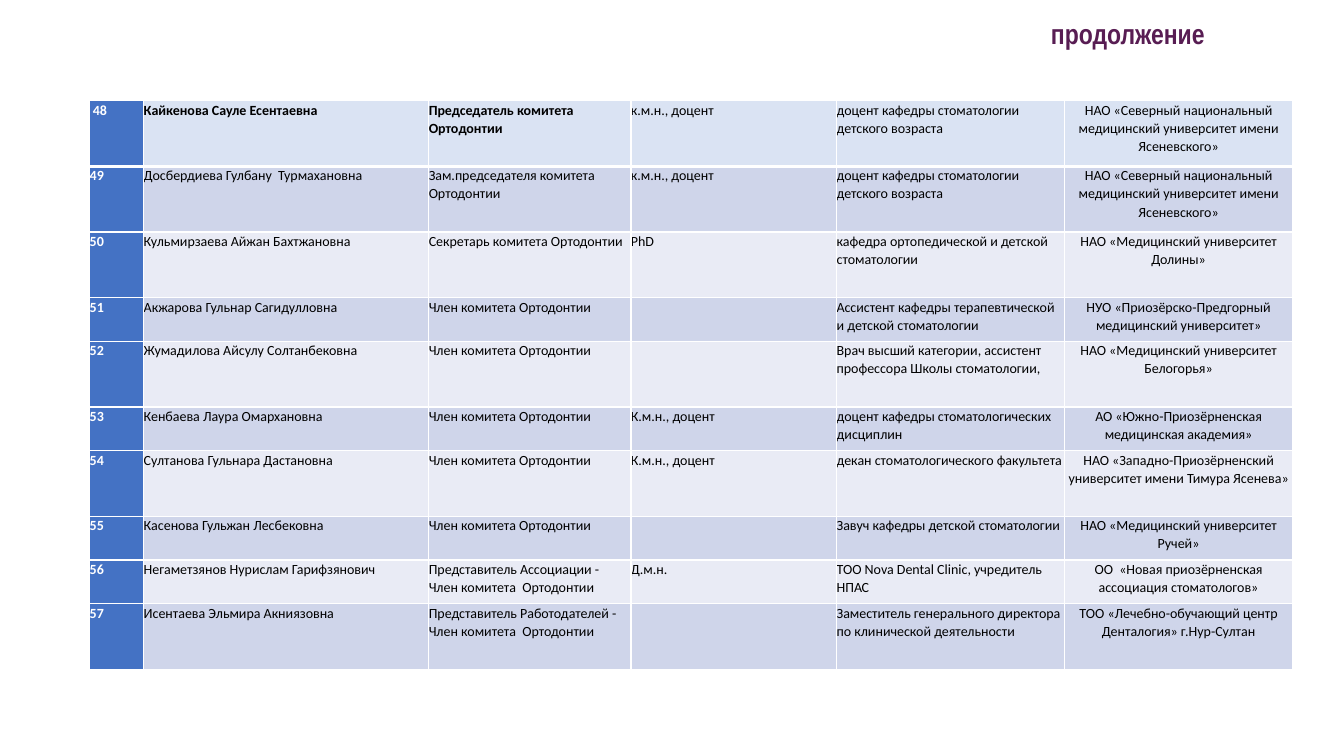
from dataclasses import dataclass

from lxml import etree
from pptx import Presentation
from pptx.dml.color import RGBColor
from pptx.enum import text
from pptx.oxml import ns
from pptx.util import Pt


@dataclass(frozen=True)
class Theme:
    title_font: str = "Arial Narrow"
    table_font: str = "Calibri"
    title_size: float = 20
    table_size: float = 10
    title: str = "581D53"
    ink: str = "000000"
    white: str = "FFFFFF"
    number_fill: str = "4472C4"
    chair_fill: str = "DAE3F3"
    bands: tuple = ("E9EBF5", "CFD5EA")
    line_spacing: float = 1.07


COLUMN_WIDTHS = (38.6, 203.6, 144.4, 147, 163, 162.4)
TALL, SHORT = 46.9, 31.2
ROW_HEIGHTS = (TALL, TALL, TALL, SHORT, TALL, SHORT, TALL, SHORT, SHORT, TALL)
MEMBER = "Член комитета Ортодонтии"
CHILD_DENTISTRY = "доцент кафедры стоматологии детского возраста"
NATIONAL = "НАО «Северный национальный медицинский университет имени Ясеневского»"

# number, name, role, degree, position, organisation
COMMITTEE = (
    (" 48", "Кайкенова Сауле Есентаевна", "Председатель комитета Ортодонтии",
     "к.м.н., доцент", CHILD_DENTISTRY, NATIONAL),
    ("49", "Досбердиева Гулбану  Турмахановна", "Зам.председателя комитета Ортодонтии",
     "к.м.н., доцент", CHILD_DENTISTRY, NATIONAL),
    ("50", "Кульмирзаева Айжан Бахтжановна", "Секретарь комитета Ортодонтии",
     "PhD", "кафедра ортопедической и детской стоматологии",
     "НАО «Медицинский университет Долины»"),
    ("51", "Акжарова Гульнар Сагидулловна", MEMBER,
     "", "Ассистент кафедры терапевтической и детской стоматологии",
     "НУО «Приозёрско-Предгорный медицинский университет»"),
    ("52", "Жумадилова Айсулу Солтанбековна", MEMBER,
     "", "Врач высший категории, ассистент профессора Школы стоматологии,",
     "НАО «Медицинский университет Белогорья»"),
    ("53", "Кенбаева Лаура Омархановна", MEMBER,
     "К.м.н., доцент", "доцент кафедры стоматологических дисциплин",
     "АО «Южно-Приозёрненская медицинская академия»"),
    ("54", "Султанова Гульнара Дастановна", MEMBER,
     "К.м.н., доцент", "декан стоматологического факультета",
     "НАО «Западно-Приозёрненский университет имени Тимура Ясенева»"),
    ("55", "Касенова Гульжан Лесбековна", MEMBER,
     "", "Завуч кафедры детской стоматологии",
     "НАО «Медицинский университет Ручей»"),
    ("56", "Негаметзянов Нурислам Гарифзянович",
     "Представитель Ассоциации - Член комитета  Ортодонтии",
     "Д.м.н.", "ТОО Nova Dental Clinic, учредитель НПАС",
     "ОО  «Новая приозёрненская ассоциация стоматологов»"),
    ("57", "Исентаева Эльмира Акниязовна",
     "Представитель Работодателей - Член комитета  Ортодонтии",
     "", "Заместитель генерального директора по клинической деятельности",
     "ТОО «Лечебно-обучающий центр Денталогия» г.Нур-Султан"),
)


class SlideBuilder:
    def __init__(self, slide, theme):
        self.slide = slide
        self.theme = theme

    def run(self, p, words, font, size, color, bold):
        r = p.add_run()
        r.text = words
        r.font.name = font
        r.font.size = Pt(size)
        r.font.bold = bold
        r.font.color.rgb = RGBColor.from_string(color)

    def title(self, words, left, top, width, height):
        th = self.theme
        sp = self.slide.shapes.title
        sp.left, sp.top, sp.width, sp.height = map(Pt, (left, top, width, height))
        tf = sp.text_frame
        tf.word_wrap = True
        tf.auto_size = text.MSO_AUTO_SIZE.SHAPE_TO_FIT_TEXT
        tf.vertical_anchor = text.MSO_ANCHOR.TOP
        p = tf.paragraphs[0]
        p.alignment = text.PP_ALIGN.CENTER
        self.run(p, words, th.title_font, th.title_size, th.title, True)

    def borders(self, cell, bottom):
        tc_pr = cell._tc.get_or_add_tcPr()
        for side, width in (("L", 1), ("R", 1), ("T", 1), ("B", bottom)):
            line = etree.SubElement(tc_pr, ns.qn(f"a:ln{side}"), w=str(Pt(width)))
            fill = etree.SubElement(line, ns.qn("a:solidFill"))
            etree.SubElement(fill, ns.qn("a:srgbClr"), val=self.theme.white)

    def cell(self, cell, words, fill, color, bold, align, bottom):
        th = self.theme
        self.borders(cell, bottom)
        cell.fill.solid()
        cell.fill.fore_color.rgb = RGBColor.from_string(fill)
        cell.margin_left = cell.margin_right = cell.margin_top = cell.margin_bottom = 0
        p = cell.text_frame.paragraphs[0]
        p.alignment = align
        p.line_spacing = th.line_spacing
        if words:
            self.run(p, words, th.table_font, th.table_size, color, bold)

    def table(self, rows, left, top, widths, heights):
        """The first row is the chair's: its own fill, bold name and role."""
        th = self.theme
        frame = self.slide.shapes.add_table(
            len(rows), len(widths), Pt(left), Pt(top), Pt(sum(widths)), Pt(sum(heights)))
        table = frame.table
        table.first_row = table.horz_banding = False
        for column, width in zip(table.columns, widths):
            column.width = Pt(width)
        for i, (row, height) in enumerate(zip(rows, heights)):
            table.rows[i].height = Pt(height)
            row_fill = th.bands[i % 2] if i else th.chair_fill
            for j, words in enumerate(row):
                is_number = j == 0
                is_last = j == len(widths) - 1
                self.cell(
                    table.cell(i, j), words,
                    fill=th.number_fill if is_number else row_fill,
                    color=th.white if is_number else th.ink,
                    bold=is_number or (i == 0 and j < 3),
                    align=text.PP_ALIGN.CENTER if is_last else text.PP_ALIGN.LEFT,
                    bottom=1 if i else 3)


def main():
    prs = Presentation()
    prs.slide_width, prs.slide_height = Pt(960), Pt(540)
    slide = prs.slides.add_slide(prs.slide_layouts.get_by_name("Title Only"))
    s = SlideBuilder(slide, Theme())
    s.table(COMMITTEE, 64.1, 72, COLUMN_WIDTHS, ROW_HEIGHTS)
    s.title("продолжение ", 679, 8, 257.8, 31.5)
    prs.save("out.pptx")


if __name__ == "__main__":
    main()
